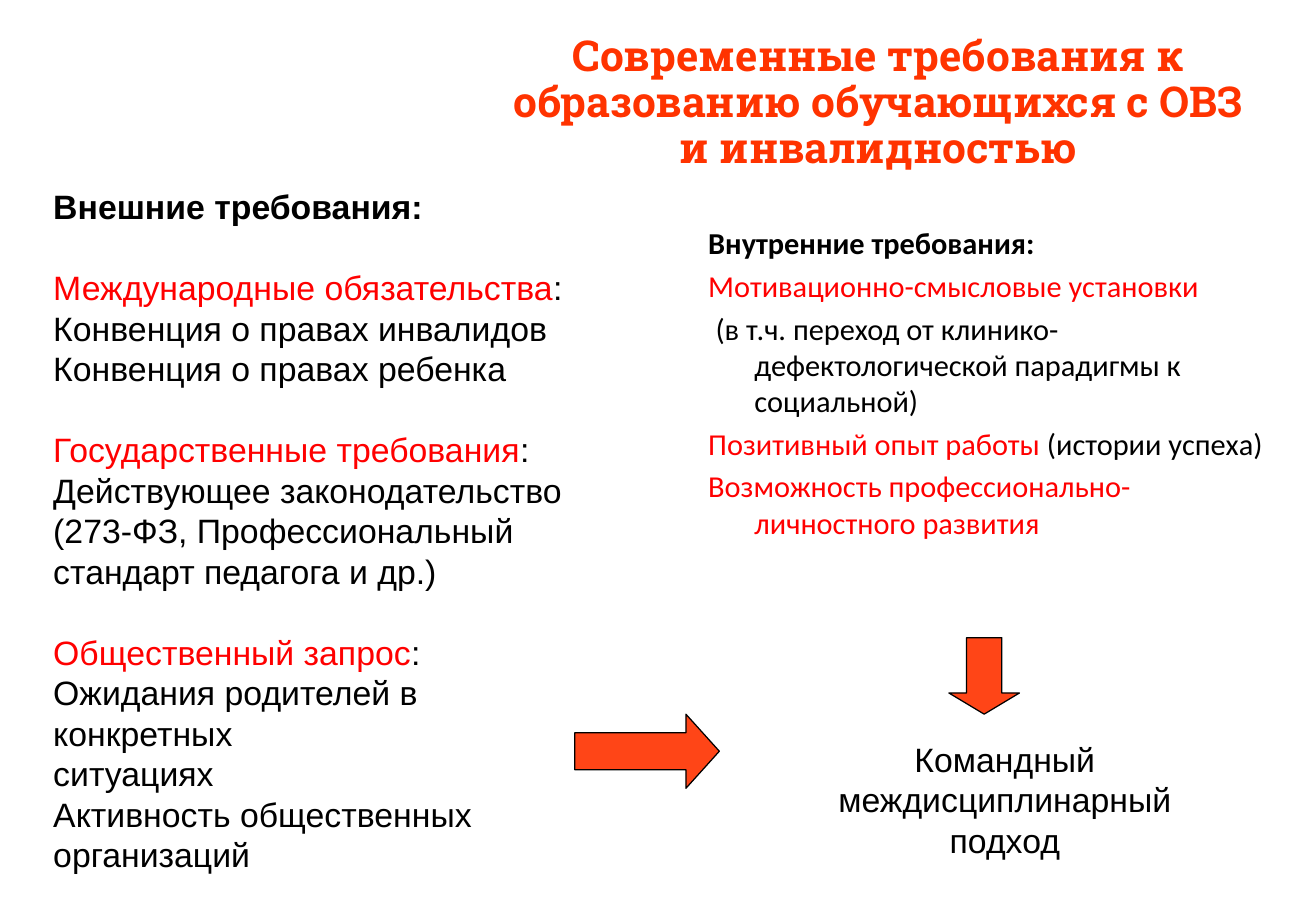
"""Build a slide on external and internal requirements for inclusive education."""
from dataclasses import dataclass

from lxml import etree
from pptx import Presentation
from pptx.dml.color import RGBColor
from pptx.enum.shapes import MSO_SHAPE
from pptx.enum.text import MSO_ANCHOR, PP_ALIGN
from pptx.oxml.ns import qn
from pptx.util import Inches, Pt

BLACK = RGBColor(0x00, 0x00, 0x00)
RED = RGBColor(0xFF, 0x00, 0x00)
ORANGE = RGBColor(0xFF, 0x33, 0x00)
DOWN = MSO_SHAPE.DOWN_ARROW
RIGHT = MSO_SHAPE.RIGHT_ARROW
LEFT = PP_ALIGN.LEFT
CENTER = PP_ALIGN.CENTER
TOP = MSO_ANCHOR.TOP
MIDDLE = MSO_ANCHOR.MIDDLE
WIDTH = Inches(10.83)
HEIGHT = Inches(7.5)


@dataclass(frozen=True)
class Area:
    """Place and size in percent of the slide."""
    left: float
    top: float
    width: float
    height: float

    def lengths(self) -> tuple[int, int, int, int]:
        return (int(WIDTH * self.left / 100), int(HEIGHT * self.top / 100),
                int(WIDTH * self.width / 100), int(HEIGHT * self.height / 100))


@dataclass(frozen=True)
class Span:
    text: str
    color: RGBColor = BLACK
    bold: bool = False


@dataclass(frozen=True)
class Line:
    spans: tuple[Span, ...]
    before: float = 0
    indent: float = 0


@dataclass(frozen=True)
class Arrow:
    kind: MSO_SHAPE
    area: Area
    head: float


@dataclass(frozen=True)
class Group:
    heading: str
    details: tuple[str, ...]


TITLE = "Современные требования к образованию обучающихся с ОВЗ и инвалидностью"
GROUPS = (
    Group("Международные обязательства",
          ("Конвенция о правах инвалидов", "Конвенция о правах ребенка")),
    Group("Государственные требования",
          ("Действующее законодательство", "(273-ФЗ, Профессиональный",
           "стандарт педагога и др.)")),
    Group("Общественный запрос",
          ("Ожидания родителей в конкретных", "ситуациях",
           "Активность общественных", "организаций")),
)
HANG = -0.38
GAP = 3.6
INTERNAL = (
    Line((Span("Внутренние требования:", bold=True),), 0, HANG),
    Line((Span("Мотивационно-смысловые установки", RED),), GAP, HANG),
    Line((Span("(в т.ч. переход от клинико-дефектологической парадигмы "
               "к социальной)"),), GAP, -0.32),
    Line((Span("Позитивный опыт работы ", RED), Span("(истории успеха)")),
         GAP, HANG),
    Line((Span("Возможность профессионально-личностного развития", RED),),
         GAP, HANG),
)
ARROWS = (
    Arrow(DOWN, Area(72.11, 70, 5.36, 8.4), 0.3),
    Arrow(RIGHT, Area(43.67, 78.4, 10.99, 8.13), 0.45),
)


def external_lines() -> list[Line]:
    lines = [Line((Span("Внешние требования:", bold=True),))]
    for group in GROUPS:
        lines.append(Line((Span(group.heading, RED), Span(":")), 24))
        lines.extend(Line((Span(detail),)) for detail in group.details)
    return lines


def add_text(page, area: Area, lines, *, font: str, size: float,
             spacing=None, align=LEFT, anchor=TOP, margin: float = 0.1,
             hang: float = 0) -> None:
    box = page.shapes.add_textbox(*area.lengths())
    frame = box.text_frame
    frame.word_wrap = True
    frame.vertical_anchor = anchor
    frame.margin_right = Inches(margin)
    for index, line in enumerate(lines):
        para = frame.add_paragraph() if index else frame.paragraphs[0]
        para.alignment = align
        para.space_before = Pt(line.before)
        if spacing:
            para.line_spacing = spacing
        if hang:
            properties = para._p.get_or_add_pPr()
            properties.set("marL", str(Inches(hang)))
            properties.set("indent", str(Inches(line.indent)))
        for span in line.spans:
            run = para.add_run()
            run.text = span.text
            run.font.name = font
            run.font.size = Pt(size)
            run.font.bold = span.bold
            run.font.color.rgb = span.color


def add_arrow(page, arrow: Arrow) -> None:
    shape = page.shapes.add_shape(arrow.kind, *arrow.area.lengths())
    shape.adjustments[1] = arrow.head
    shape.shadow.inherit = False
    shape.fill.solid()
    shape.fill.fore_color.rgb = ORANGE
    color = shape.fill._xPr.find(qn("a:solidFill"))[0]
    etree.SubElement(color, qn("a:alpha")).set("val", "91000")
    shape.line.color.rgb = BLACK
    shape.line.width = Pt(0.75)


def main() -> None:
    deck = Presentation()
    deck.slide_width = WIDTH
    deck.slide_height = HEIGHT
    page = deck.slides.add_slide(deck.slide_layouts[6])
    add_text(page, Area(37.77, 3.07, 57.99, 16.67),
             [Line((Span(TITLE, ORANGE, True),))], font="Roboto Slab",
             size=25.2, spacing=0.9, align=CENTER, anchor=MIDDLE)
    add_text(page, Area(52.91, 24, 44.14, 66), INTERNAL, font="Calibri",
             size=18, margin=0.05, hang=0.38)
    add_text(page, Area(3.14, 19.73, 40.81, 70), external_lines(),
             font="Arial", size=20, spacing=Pt(24))
    add_text(page, Area(57.06, 80.4, 38.6, 9.47),
             [Line((Span("Командный междисциплинарный"),)),
              Line((Span("подход"),))],
             font="Arial", size=20, spacing=Pt(24), align=CENTER)
    for arrow in ARROWS:
        add_arrow(page, arrow)
    deck.save("out.pptx")


if __name__ == "__main__":
    main()
